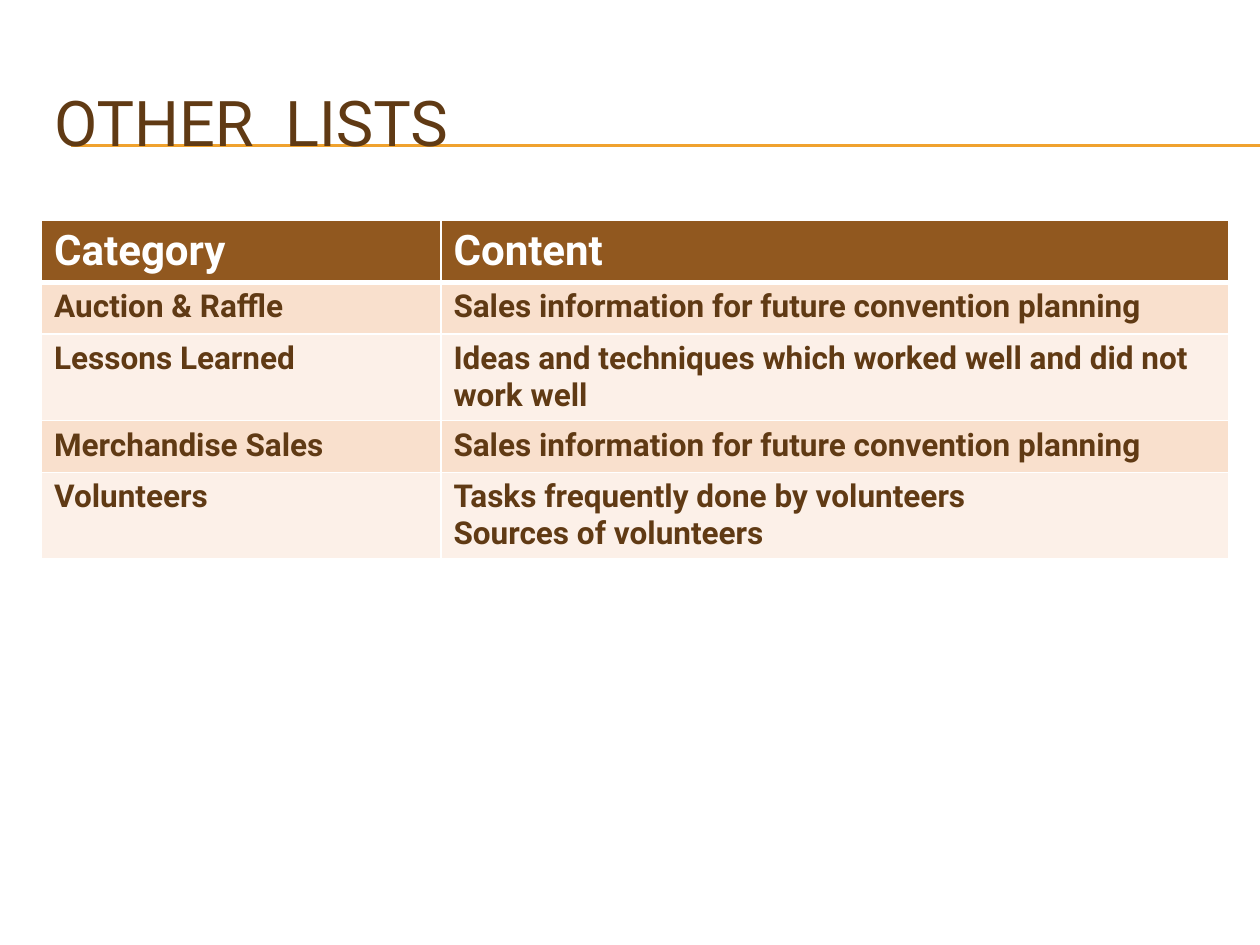
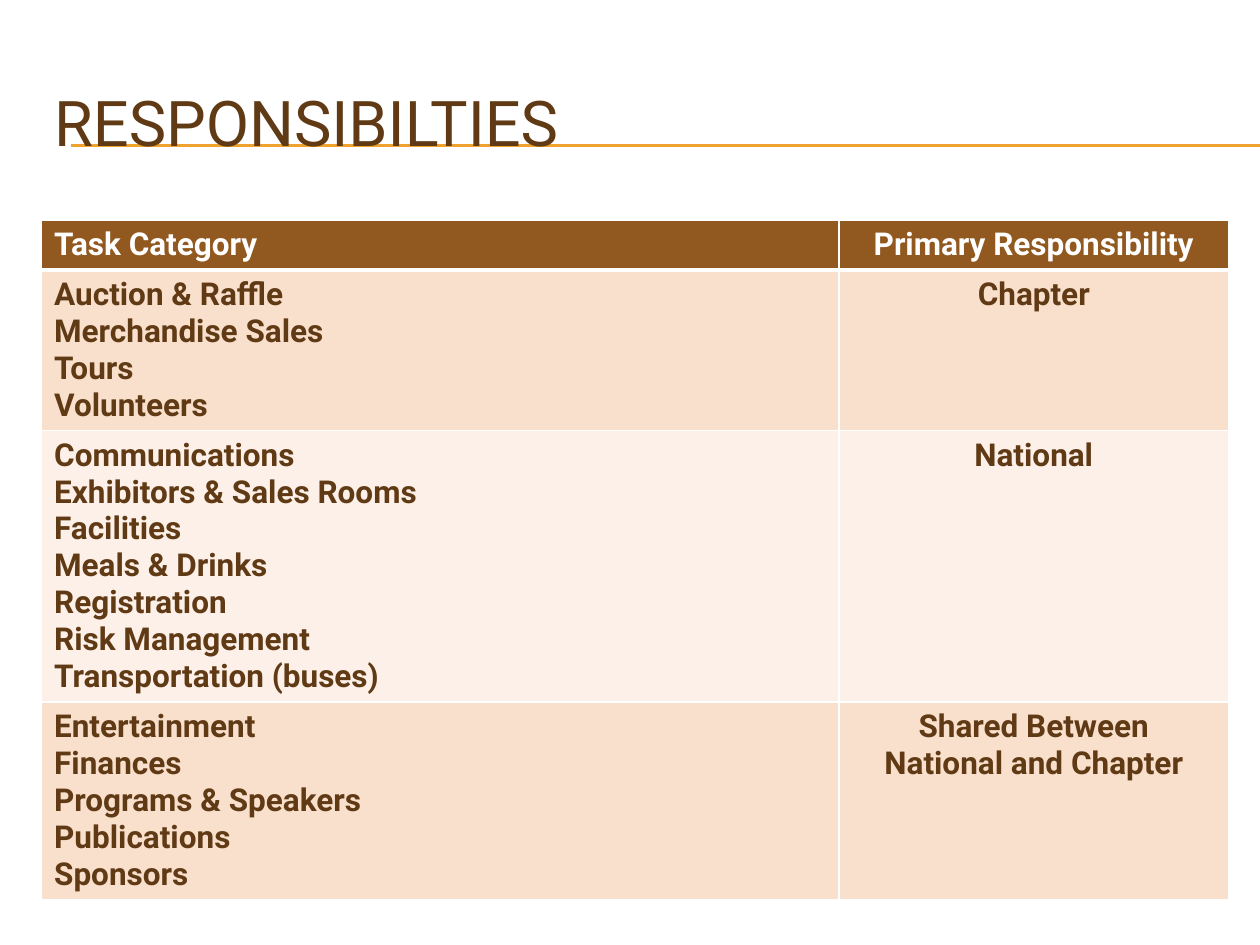
from lxml import etree
from pptx import Presentation
from pptx import util as u
from pptx.dml.color import RGBColor
from pptx.enum import shapes, text
from pptx.oxml import ns

# Content: a cell is a list of paragraphs; "lines" counts the text lines per row
LEFT, CENTER = text.PP_ALIGN.LEFT, text.PP_ALIGN.CENTER
SLIDES = [
    dict(
        title="OTHER  LISTS",
        header_size=24,
        minimum_row=0.41,
        columns=[3.17, 6.25],
        alignments=[LEFT, LEFT],
        lines=[1, 1, 2, 1, 2],
        rows=[
            (["Category"], ["Content"]),
            (["Auction & Raffle"],
             ["Sales information for future convention planning"]),
            (["Lessons Learned"],
             ["Ideas and techniques which worked well and did not work well"]),
            (["Merchandise Sales"],
             ["Sales information for future convention planning"]),
            (["Volunteers"],
             ["Tasks frequently done by volunteers", "Sources of volunteers"]),
        ],
    ),
    dict(
        title="RESPONSIBILTIES",
        header_size=18,
        minimum_row=0.31,
        columns=[6.33, 3.09],
        alignments=[LEFT, CENTER],
        lines=[1, 4, 7, 5],
        rows=[
            (["Task Category"], ["Primary Responsibility"]),
            (["Auction & Raffle", "Merchandise Sales", "Tours", "Volunteers"],
             ["Chapter"]),
            (["Communications", "Exhibitors & Sales Rooms", "Facilities",
              "Meals & Drinks", "Registration", "Risk Management",
              "Transportation (buses)"],
             ["National"]),
            (["Entertainment", "Finances", "Programs & Speakers",
              "Publications", "Sponsors"],
             ["Shared Between", "National and Chapter"]),
        ],
    ),
]

# Shared look
FONT = "Roboto"
BROWN, WHITE, GOLD = "603A14", "FFFFFF", "F0A22E"
HEADER_FILL, BAND_FILLS = "91581F", ["F9E0CD", "FCF0E8"]
TITLE_SIZE, BODY_SIZE = 36, 18
WIDTH, HEIGHT = 10, 7.5
MARGIN, TABLE_TOP = 0.33, 1.75
RULE_LEFT, RULE_TOPS = 0.56, [1.15, 1.16]
LINE_SPACING, CELL_PADDING = 1.172, 0.1


def color(value):
    return RGBColor.from_string(value)


def write(frame, paragraphs, size, fill, bold=False, align=LEFT):
    frame.text = "\n".join(paragraphs)
    for paragraph in frame.paragraphs:
        paragraph.alignment = align
        for run in paragraph.runs:
            font = run.font
            font.name, font.size, font.bold = FONT, u.Pt(size), bold
            font.color.rgb = color(fill)


def set_borders(cell, top, bottom):
    properties = cell._tc.get_or_add_tcPr()
    widths = dict(lnL=1, lnR=1, lnT=top, lnB=bottom)
    for position, (side, width) in enumerate(widths.items()):
        line = etree.Element(ns.qn(f"a:{side}"), w=str(u.Pt(width)))
        solid = etree.SubElement(line, ns.qn("a:solidFill"))
        etree.SubElement(solid, ns.qn("a:srgbClr"), val=WHITE)
        properties.insert(position, line)


def style_layout(layout, slide):
    """Put the title position and the gold rules on the shared layout."""
    title = layout.placeholders[0]
    title.left, title.top = u.Inches(MARGIN), u.Inches(0.5)
    title.width, title.height = u.Inches(9.5), u.Inches(0.92)
    for top in RULE_TOPS:
        rule = slide.shapes.add_connector(
            shapes.MSO_CONNECTOR.STRAIGHT, u.Inches(RULE_LEFT), u.Inches(top),
            u.Inches(WIDTH), u.Inches(top))
        rule.line.color.rgb, rule.line.width = color(GOLD), u.Pt(0.75)
        etree.SubElement(rule._element.spPr, ns.qn("a:effectLst"))
        layout.shapes._spTree.append(rule._element)


def add_title(slide, title):
    frame = slide.shapes.title.text_frame
    frame.vertical_anchor = text.MSO_ANCHOR.MIDDLE
    frame.word_wrap = True
    write(frame, [title], TITLE_SIZE, BROWN)


def add_table(slide, content):
    rows, columns = content["rows"], content["columns"]
    sizes = [content["header_size"]] + [BODY_SIZE] * (len(rows) - 1)
    heights = [
        max(content["minimum_row"], count * size * LINE_SPACING / 72 + CELL_PADDING)
        for count, size in zip(content["lines"], sizes)]
    table = slide.shapes.add_table(
        len(rows), len(columns), u.Inches(MARGIN), u.Inches(TABLE_TOP),
        u.Inches(sum(columns)), u.Inches(sum(heights))).table
    for column, width in zip(table.columns, columns):
        column.width = u.Inches(width)
    for index, row in enumerate(rows):
        table.rows[index].height = u.Inches(heights[index])
        header = index == 0
        fill = HEADER_FILL if header else BAND_FILLS[(index - 1) % 2]
        for column, paragraphs in enumerate(row):
            cell = table.cell(index, column)
            cell.fill.solid()
            cell.fill.fore_color.rgb = color(fill)
            write(cell.text_frame, paragraphs, sizes[index],
                  WHITE if header else BROWN, bold=True,
                  align=content["alignments"][column])
            set_borders(cell, top=3 if index == 1 else 1,
                        bottom=3 if header else 1)


def main():
    presentation = Presentation()
    presentation.slide_width = u.Inches(WIDTH)
    presentation.slide_height = u.Inches(HEIGHT)
    layout = presentation.slide_layouts.get_by_name("Title Only")
    for index, content in enumerate(SLIDES):
        slide = presentation.slides.add_slide(layout)
        if index == 0:
            style_layout(layout, slide)
        add_title(slide, content["title"])
        add_table(slide, content)
    presentation.save("out.pptx")


if __name__ == "__main__":
    main()
